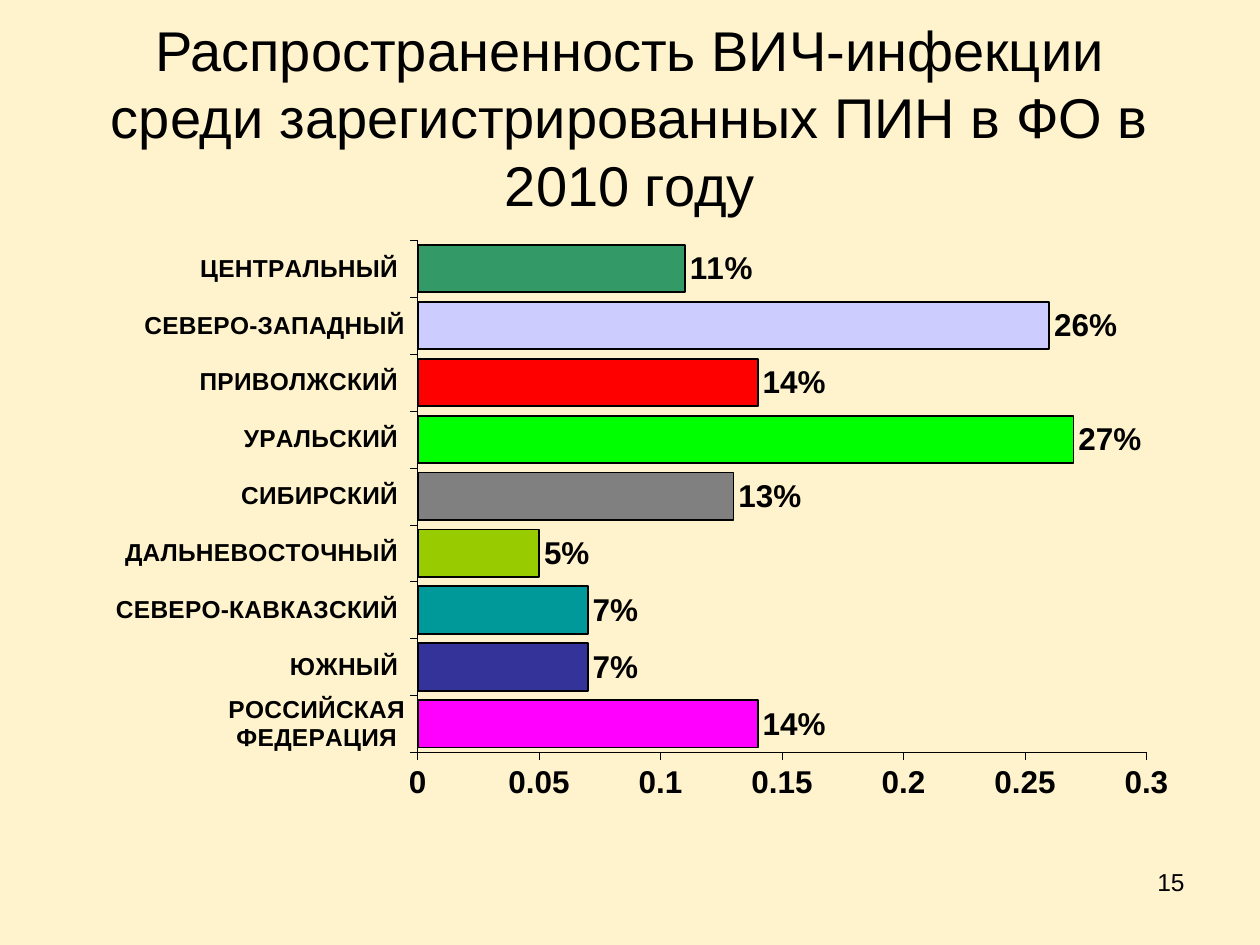
from lxml import etree
from pptx import Presentation
from pptx.chart.data import CategoryChartData
from pptx.dml.color import RGBColor
from pptx.enum.chart import XL_CHART_TYPE, XL_LABEL_POSITION, XL_TICK_MARK
from pptx.enum.text import MSO_ANCHOR, PP_ALIGN
from pptx.oxml.ns import qn
from pptx.util import Inches, Pt

BAR = XL_CHART_TYPE.BAR_CLUSTERED
OUTSIDE_END = XL_LABEL_POSITION.OUTSIDE_END
TICK_OUT, TICK_NONE = XL_TICK_MARK.OUTSIDE, XL_TICK_MARK.NONE
TOP, MIDDLE = MSO_ANCHOR.TOP, MSO_ANCHOR.MIDDLE
CENTER, RIGHT = PP_ALIGN.CENTER, PP_ALIGN.RIGHT

FONT = "Arial"
COLORS = {"background": "FFF3CD", "ink": "000000", "series": "BBE0E3"}
DISTRICTS = [
    ("РОССИЙСКАЯ ФЕДЕРАЦИЯ", 0.14, "FF00FF"),
    ("ЮЖHЫЙ ", 0.07, "333399"),
    ("СЕВЕРО-КАВКАЗСКИЙ ", 0.07, "009999"),
    ("ДАЛЬHЕВОСТОЧHЫЙ ", 0.05, "99CC00"),
    ("СИБИРСКИЙ ", 0.13, "808080"),
    ("УРАЛЬСКИЙ ", 0.27, "00FF00"),
    ("ПРИВОЛЖСКИЙ ", 0.14, "FF0000"),
    ("CЕВЕРО-ЗАПАДHЫЙ", 0.26, "CCCCFF"),
    ("ЦЕHТРАЛЬHЫЙ ", 0.11, "339966"),
]


def rgb(name):
    return RGBColor.from_string(COLORS.get(name, name))


def style_font(font, size, bold=False):
    font.name = FONT
    font.size = Pt(size)
    font.bold = bold
    font.color.rgb = rgb("ink")


def fill_solid(fill, color):
    fill.solid()
    fill.fore_color.rgb = rgb(color)


def style_line(line, width):
    line.color.rgb = rgb("ink")
    line.width = Pt(width)


def place(sp, left, top, width, height):
    sp.left, sp.top = Inches(left), Inches(top)
    sp.width, sp.height = Inches(width), Inches(height)


def write_text(sp, text, size, align, anchor):
    tf = sp.text_frame
    tf.word_wrap = True
    tf.vertical_anchor = anchor
    p = tf.paragraphs[0]
    p.alignment = align
    r = p.add_run()
    r.text = text
    style_font(r.font, size)


def add_title(s, text):
    sp = s.shapes.title
    place(sp, 0.5, 0.3, 9, 1.25)
    write_text(sp, text, 32, CENTER, MIDDLE)


def add_page_number(s, text):
    sp = s.shapes.add_textbox(Inches(7.17), Inches(6.83), Inches(2.33), Inches(0.52))
    write_text(sp, text, 14, RIGHT, TOP)


def style_axis(axis, size):
    axis.has_major_gridlines = False
    axis.major_tick_mark = TICK_OUT
    axis.minor_tick_mark = TICK_NONE
    style_font(axis.tick_labels.font, size, True)
    style_line(axis.format.line, 0.25)


def set_plot_layout(chart, x, y, w, h):
    plot_area = chart.plots[0]._element.getparent()
    layout = plot_area.find(qn("c:layout"))
    if layout is None:
        layout = etree.Element(qn("c:layout"))
        plot_area.insert(0, layout)
    manual = etree.SubElement(layout, qn("c:manualLayout"))
    settings = [("layoutTarget", "inner"), ("xMode", "edge"), ("yMode", "edge"),
                ("x", x), ("y", y), ("w", w), ("h", h)]
    for tag, value in settings:
        etree.SubElement(manual, qn(f"c:{tag}")).set("val", str(value))


def style_labels(plot):
    plot.has_data_labels = True
    labels = plot.data_labels
    labels.show_value = True
    labels.number_format = "0%"
    labels.number_format_is_linked = False
    labels.position = OUTSIDE_END
    style_font(labels.font, 18, True)


def add_district_chart(s):
    names, values, colors = zip(*DISTRICTS)
    data = CategoryChartData()
    data.categories = names
    data.add_series("Series 1", values)
    chart = s.shapes.add_chart(
        BAR, Inches(0.92), Inches(1.81), Inches(8.52), Inches(4.84), data
    ).chart
    chart.has_legend = False
    chart.has_title = False
    style_font(chart.font, 18, True)
    style_axis(chart.category_axis, 14)
    style_axis(chart.value_axis, 18)
    chart.value_axis.minimum_scale = 0
    chart.value_axis.maximum_scale = 0.3
    chart.value_axis.major_unit = 0.05
    set_plot_layout(chart, 0.28, 0.02, 0.68, 0.84)

    plot = chart.plots[0]
    plot.gap_width = 20
    plot.vary_by_categories = False
    style_labels(plot)
    series = plot.series[0]
    series.invert_if_negative = False
    fill_solid(series.format.fill, "series")
    style_line(series.format.line, 1)
    for i, color in enumerate(colors):
        point = series.points[i].format
        fill_solid(point.fill, color)
        style_line(point.line, 1)


def main():
    prs = Presentation()
    prs.slide_width, prs.slide_height = Inches(10), Inches(7.5)
    s = prs.slides.add_slide(prs.slide_layouts[5])
    fill_solid(s.background.fill, "background")
    add_page_number(s, "15")
    add_title(s, "Распространенность ВИЧ-инфекции среди зарегистрированных ПИН в ФО в 2010 году")
    add_district_chart(s)
    prs.save("out.pptx")


if __name__ == "__main__":
    main()
